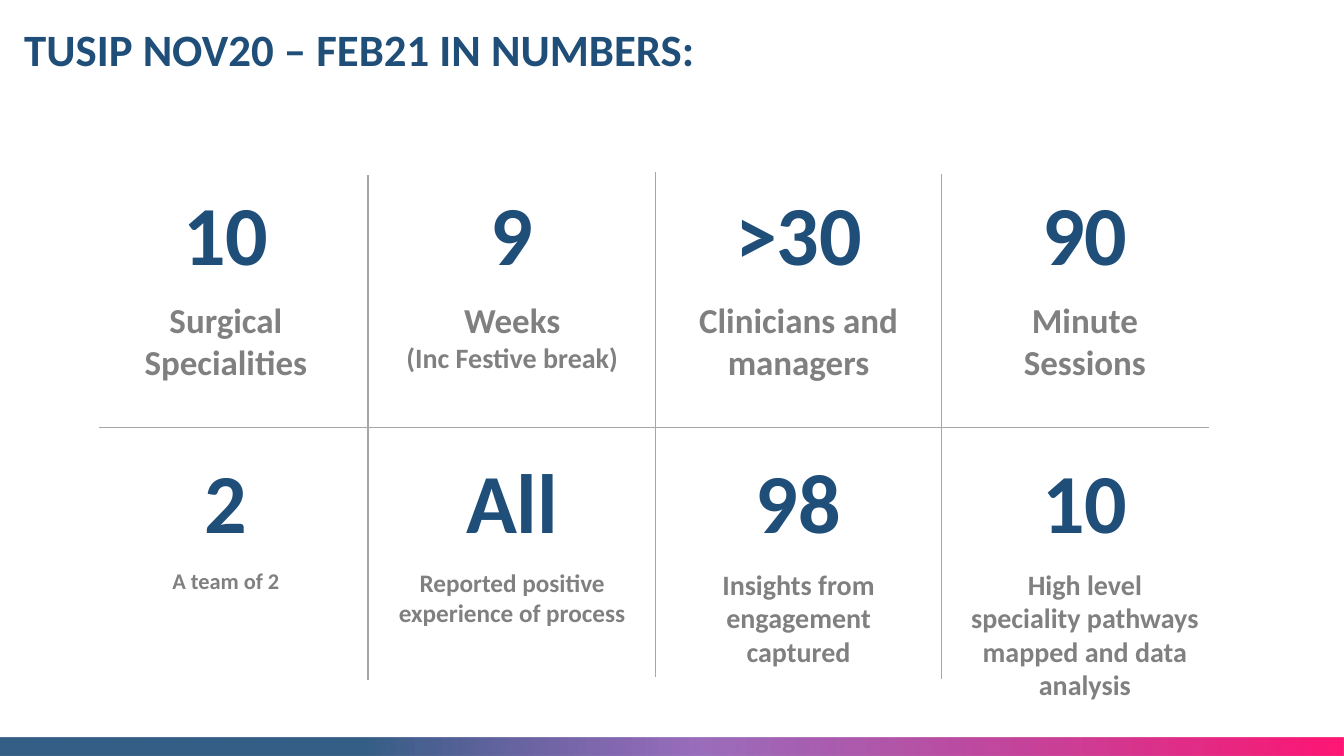
from lxml import etree
from pptx import Presentation
from pptx.dml.color import RGBColor
from pptx.enum.shapes import MSO_CONNECTOR, MSO_SHAPE
from pptx.enum.text import MSO_ANCHOR, MSO_AUTO_SIZE, PP_ALIGN
from pptx.oxml.ns import qn
from pptx.util import Inches, Pt

STRAIGHT = MSO_CONNECTOR.STRAIGHT
RECTANGLE = MSO_SHAPE.RECTANGLE
TOP = MSO_ANCHOR.TOP
NO_AUTOFIT = MSO_AUTO_SIZE.NONE
LEFT, CENTER = PP_ALIGN.LEFT, PP_ALIGN.CENTER

NAVY = RGBColor(0x1F, 0x4E, 0x79)
PURPLE = RGBColor(0x70, 0x30, 0xA0)
PINK = RGBColor(0xFF, 0x00, 0x66)
GREY = RGBColor(0x80, 0x80, 0x80)
RULE_GREY = RGBColor(0xA6, 0xA6, 0xA6)

# Each statistic: figure, then its (label, size) lines
STATISTICS = [
    [
        ("10", [("Surgical Specialities", 25)]),
        ("9", [("Weeks", 25), ("(Inc Festive break)", 20)]),
        (">30", [("Clinicians and managers", 25)]),
        ("90", [("Minute Sessions", 25)]),
    ],
    [
        ("2", [("A team of 2", 16)]),
        ("All", [("Reported positive experience of process", 18)]),
        ("98", [("Insights from engagement captured", 20)]),
        ("10", [("High level speciality pathways mapped and data analysis", 20)]),
    ],
]
ROW_TOPS = [1.75, 4.41]
GRID_LEFT, COLUMN_PITCH = 1, 2.84
CELL_WIDTH, CELL_HEIGHT = 2.48, 2.36


def write_text(paragraph, text, size, color=NAVY, align=CENTER, space_before=0):
    paragraph.alignment = align
    paragraph.space_before = Pt(space_before)
    run = paragraph.add_run()
    run.text = text
    run.font.name = "Calibri"
    run.font.size = Pt(size)
    run.font.bold = True
    run.font.color.rgb = color


def add_rule(x1, y1, x2, y2):
    rule = slide.shapes.add_connector(
        STRAIGHT, Inches(x1), Inches(y1), Inches(x2), Inches(y2))
    rule.line.color.rgb = RULE_GREY
    rule.line.width = Pt(1)
    etree.SubElement(rule._element.spPr, qn("a:effectLst"))


prs = Presentation()
prs.slide_width = Inches(13.33)
prs.slide_height = Inches(7.5)
slide = prs.slides.add_slide(prs.slide_layouts[5])

# Title
title = slide.shapes.title
title.left, title.top = Inches(0.14), Inches(0.17)
title.width, title.height = Inches(6.92), Inches(0.64)
title_frame = title.text_frame
title_frame.word_wrap = False
title_frame.auto_size = NO_AUTOFIT
title_frame.vertical_anchor = TOP
write_text(title_frame.paragraphs[0], "TUSIP NOV20 – FEB21 IN NUMBERS:", 32, align=LEFT)

# Footer band with a translucent gradient
footer_band = slide.shapes.add_shape(
    RECTANGLE, 0, Inches(7.32), prs.slide_width, Inches(0.18))
footer_band.shadow.inherit = False
footer_band.line.fill.background()
footer_band.fill.gradient()
footer_band.fill.gradient_angle = 0
stops = footer_band._element.spPr.find(".//" + qn("a:gsLst"))
for stop in list(stops):
    stops.remove(stop)
for position, color, opacity in [(27, NAVY, 90), (52, PURPLE, 70), (100, PINK, 91)]:
    stop = etree.SubElement(stops, qn("a:gs"), pos=str(position * 1000))
    stop_color = etree.SubElement(stop, qn("a:srgbClr"), val=str(color))
    etree.SubElement(stop_color, qn("a:alpha"), val=str(opacity * 1000))

# Grid rules
add_rule(0.98, 4.24, 11.99, 4.24)
for divider_x, divider_top in [(3.65, 1.74), (6.5, 1.71), (9.34, 1.73)]:
    add_rule(divider_x, divider_top, divider_x, divider_top + 5.01)

# Statistics
for row_top, row in zip(ROW_TOPS, STATISTICS):
    for column, (figure, labels) in enumerate(row):
        cell = slide.shapes.add_textbox(
            Inches(GRID_LEFT + column * COLUMN_PITCH), Inches(row_top),
            Inches(CELL_WIDTH), Inches(CELL_HEIGHT))
        cell_frame = cell.text_frame
        cell_frame.word_wrap = True
        write_text(cell_frame.paragraphs[0], figure, 60)
        for index, (label, size) in enumerate(labels):
            write_text(cell_frame.add_paragraph(), label, size, color=GREY,
                       space_before=12 if index == 0 else 0)

prs.save("out.pptx")
